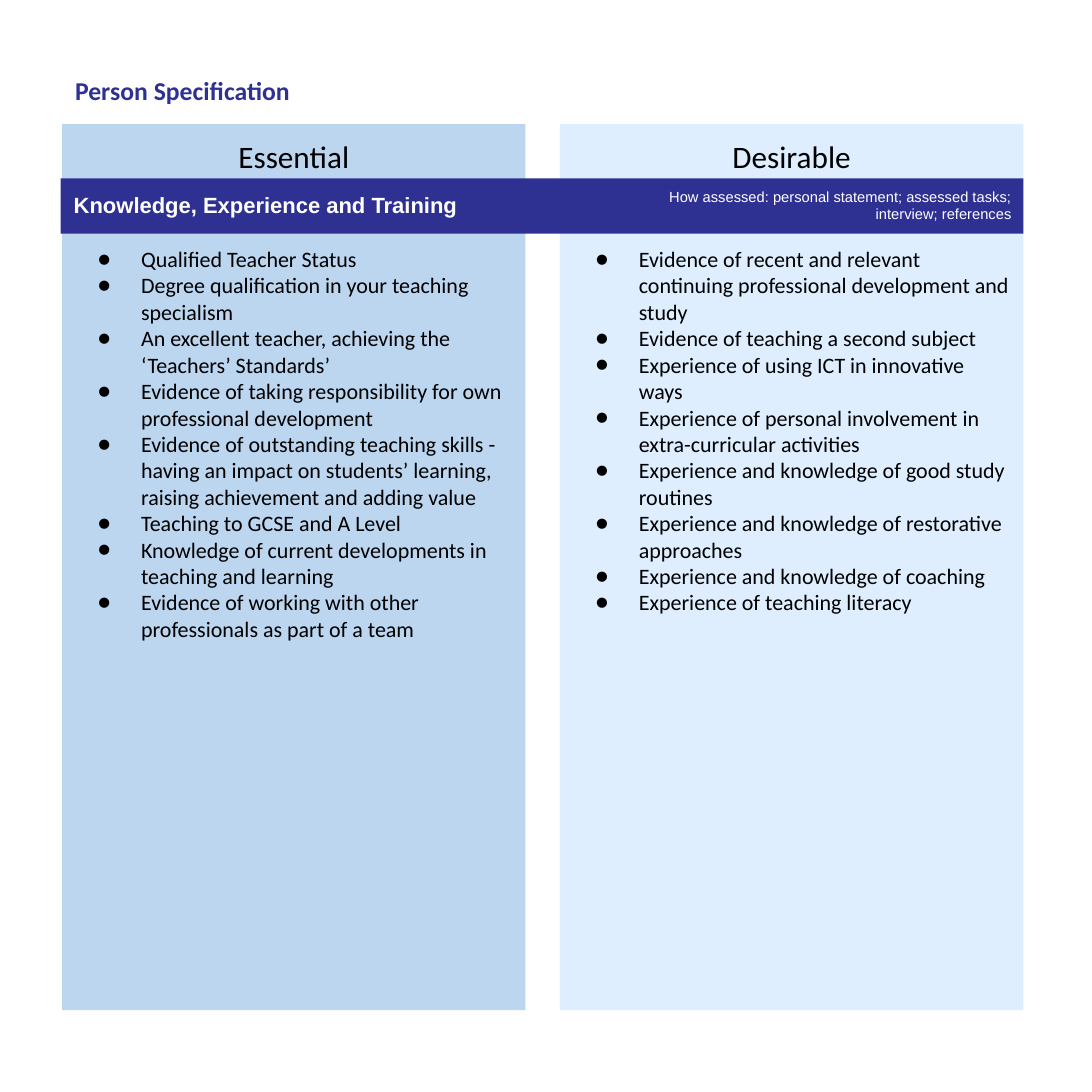
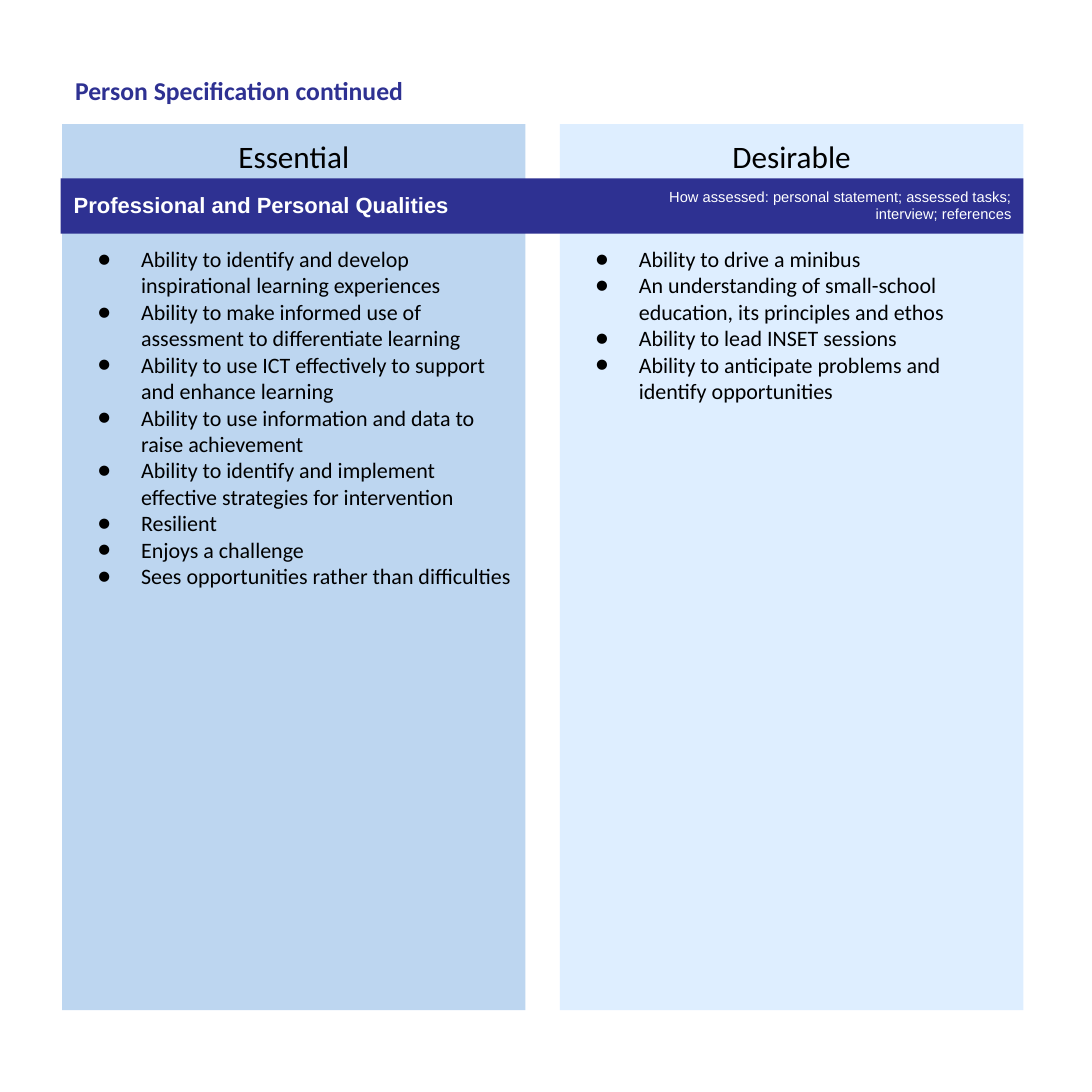
from lxml import etree
from pptx import Presentation
from pptx.dml.color import RGBColor
from pptx.enum.shapes import MSO_SHAPE
from pptx.enum.text import MSO_ANCHOR, PP_ALIGN
from pptx.oxml.ns import qn
from pptx.util import Inches, Pt

RECTANGLE = MSO_SHAPE.RECTANGLE
TOP, MIDDLE = MSO_ANCHOR.TOP, MSO_ANCHOR.MIDDLE
LEFT, CENTER, RIGHT = PP_ALIGN.LEFT, PP_ALIGN.CENTER, PP_ALIGN.RIGHT

NAVY = RGBColor(0x2E, 0x31, 0x92)
MID_BLUE = RGBColor(0xBD, 0xD6, 0xF0)
PALE_BLUE = RGBColor(0xDE, 0xEE, 0xFF)
BLACK = RGBColor(0, 0, 0)
WHITE = RGBColor(0xFF, 0xFF, 0xFF)

SIDE = 8.27
MARGIN = 0.47
COLUMN = 3.51
GUTTER = 0.26
CONTENT_RIGHT = MARGIN + 2 * COLUMN + GUTTER
HEADING_TOP = 0.94
ROW = 0.42
PANEL_TOP = HEADING_TOP + ROW
PANEL_HEIGHT = 6.29
INSET = 0.1
BULLET_TOP_INSET = 0.5

TITLE = {"size": Pt(14), "name": "Calibri", "bold": True}
HEADING = {"size": Pt(17), "name": "Calibri"}
BODY = {"size": Pt(12), "name": "Calibri"}
BAND = {"size": Pt(12), "name": "Arial", "bold": True}
NOTE = {"size": Pt(8), "name": "Arial"}

ASSESSMENT = "How assessed: personal statement; assessed tasks; interview; references"
COLUMNS = [("Essential", MID_BLUE), ("Desirable", PALE_BLUE)]

PAGES = [
    ("Person Specification", "Knowledge, Experience and Training", [
        [
            "Qualified Teacher Status",
            "Degree qualification in your teaching specialism",
            "An excellent teacher, achieving the ‘Teachers’ Standards’",
            "Evidence of taking responsibility for own professional development",
            "Evidence of outstanding teaching skills - having an impact on students’ "
            "learning, raising achievement and adding value",
            "Teaching to GCSE and A Level",
            "Knowledge of current developments in teaching and learning",
            "Evidence of working with other professionals as part of a team",
        ],
        [
            "Evidence of recent and relevant continuing professional development and study",
            "Evidence of teaching a second subject",
            "Experience of using ICT in innovative ways",
            "Experience of personal involvement in extra-curricular activities",
            "Experience and knowledge of good study routines",
            "Experience and knowledge of restorative approaches",
            "Experience and knowledge of coaching",
            "Experience of teaching literacy",
        ],
    ]),
    ("Person Specification continued", "Professional and Personal Qualities", [
        [
            "Ability to identify and develop inspirational learning experiences",
            "Ability to make informed use of assessment to differentiate learning",
            "Ability to use ICT effectively to support and enhance learning",
            "Ability to use information and data to raise achievement",
            "Ability to identify and implement effective strategies for intervention",
            "Resilient",
            "Enjoys a challenge",
            "Sees opportunities rather than difficulties",
        ],
        [
            "Ability to drive a minibus",
            "An understanding of small-school education, its principles and ethos",
            "Ability to lead INSET sessions",
            "Ability to anticipate problems and identify opportunities",
        ],
    ]),
]


def add_block(slide, box, lines, style, color, fill=None, align=LEFT,
              anchor=TOP, top_inset=INSET):
    box = [Inches(length) for length in box]
    if fill is None:
        block = slide.shapes.add_textbox(*box)
    else:
        block = slide.shapes.add_shape(RECTANGLE, *box)
        block.shadow.inherit = False
        block.fill.solid()
        block.fill.fore_color.rgb = fill
        block.line.fill.background()
    frame = block.text_frame
    frame_format = {
        "word_wrap": True, "vertical_anchor": anchor,
        "margin_left": Inches(INSET), "margin_right": Inches(INSET),
        "margin_top": Inches(top_inset), "margin_bottom": Inches(0),
    }
    if anchor == MIDDLE:
        frame_format["margin_bottom"] = Inches(top_inset)
    for attribute, value in frame_format.items():
        setattr(frame, attribute, value)
    frame.text = "\n".join(lines)
    for paragraph in frame.paragraphs:
        paragraph.alignment = align
        font = paragraph.runs[0].font
        for attribute, value in style.items():
            setattr(font, attribute, value)
        font.color.rgb = color
    return frame


def add_bullets(frame):
    for paragraph in frame.paragraphs:
        properties = paragraph._p.get_or_add_pPr()
        properties.set("marL", str(Inches(0.5)))
        properties.set("indent", str(Inches(-0.33)))
        etree.SubElement(properties, qn("a:buFont")).set("typeface", BODY["name"])
        etree.SubElement(properties, qn("a:buChar")).set("char", "●")


prs = Presentation()
prs.slide_width = prs.slide_height = Inches(SIDE)
blank = prs.slide_layouts[6]

for title, section, criteria in PAGES:
    slide = prs.slides.add_slide(blank)
    for index, ((heading, tint), points) in enumerate(zip(COLUMNS, criteria)):
        left = MARGIN + index * (COLUMN + GUTTER)
        panel = add_block(slide, (left, PANEL_TOP, COLUMN, PANEL_HEIGHT), points,
                          BODY, BLACK, tint, top_inset=BULLET_TOP_INSET)
        add_bullets(panel)
        add_block(slide, (left, HEADING_TOP, COLUMN, ROW), [heading],
                  HEADING, BLACK, tint, CENTER)
    add_block(slide, (MARGIN - 0.01, PANEL_TOP - 0.01, CONTENT_RIGHT - MARGIN + 0.01, ROW),
              [section], BAND, WHITE, NAVY)
    add_block(slide, (CONTENT_RIGHT - 2.88, PANEL_TOP - 0.04, 2.89, 0.3),
              [ASSESSMENT], NOTE, WHITE, align=RIGHT)
    add_block(slide, (MARGIN, HEADING_TOP - 0.51, 2.81, 0.5),
              [title], TITLE, NAVY, anchor=MIDDLE)

prs.save("out.pptx")
